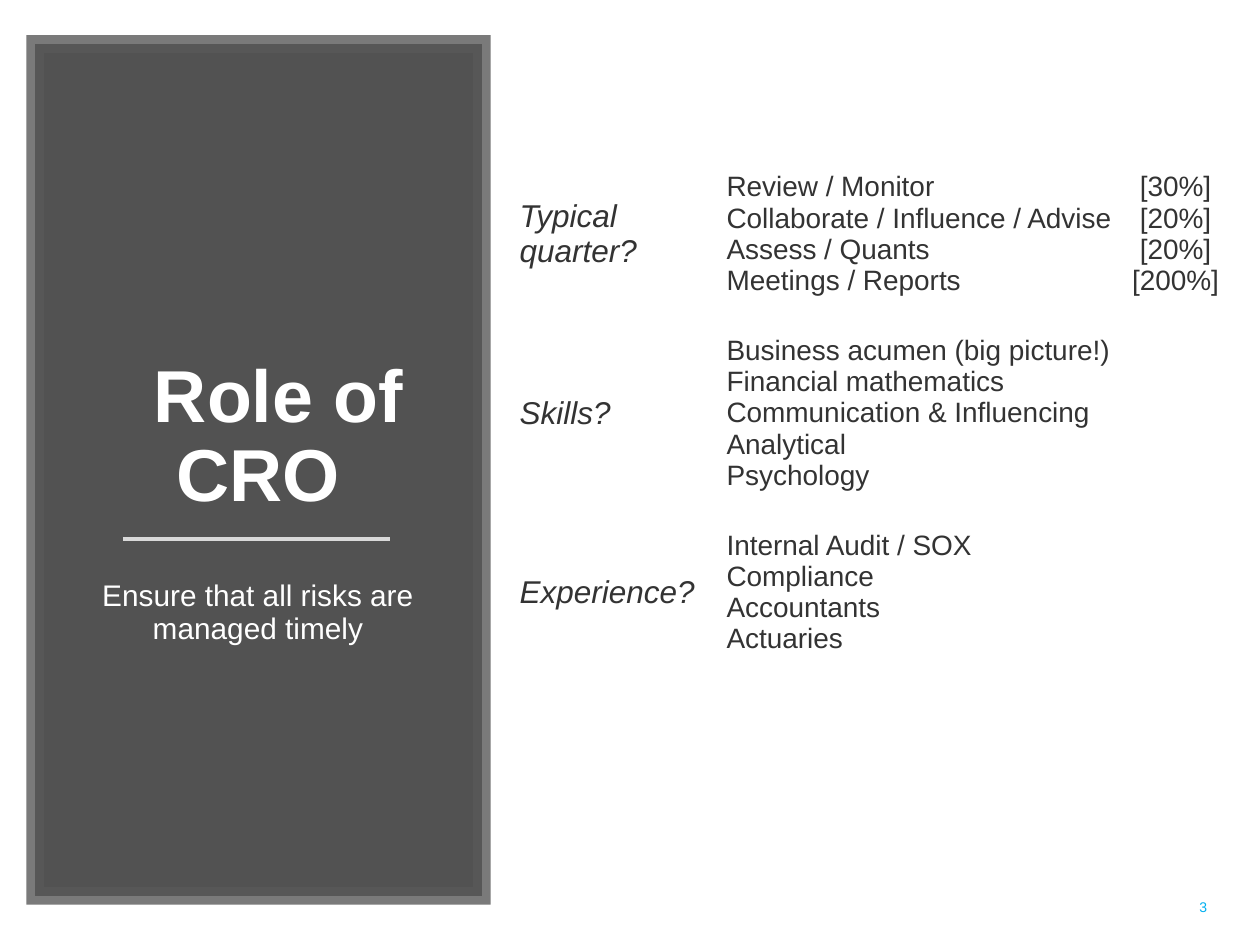
from lxml.etree import SubElement
from pptx import Presentation
from pptx.dml.color import RGBColor
from pptx.enum.shapes import MSO_CONNECTOR as CONN, MSO_SHAPE as SHAPE
from pptx.enum.text import MSO_ANCHOR as ANCHOR, PP_ALIGN as ALIGN
from pptx.oxml.ns import qn
from pptx.util import Pt

PX = 914400 / 126
FONT = "Arial"
COLORS = {
    "panel": "404040", "frame": "595959", "rule": "D9D9D9",
    "light": "FFFFFF", "ink": "333333", "number": "00B0F0",
}
ROLE = [
    ("Typical quarter?", [
        "Review / Monitor\t[30%]",
        "Collaborate / Influence / Advise\t[20%]",
        "Assess / Quants\t[20%]",
        "Meetings / Reports\t[200%]",
    ]),
    ("Skills?", [
        "Business acumen (big picture!)", "Financial mathematics",
        "Communication & Influencing", "Analytical", "Psychology",
    ]),
    ("Experience?", [
        "Internal Audit / SOX", "Compliance", "Accountants", "Actuaries",
    ]),
]


def emu(px):
    return round(px * PX)


def color(name):
    return RGBColor.from_string(COLORS[name])


def set_alpha(fill, percent):
    clr = fill._xPr.find(".//" + qn("a:srgbClr"))
    SubElement(clr, qn("a:alpha"), val=str(percent * 1000))


def add_run(p, text, size, name, bold=False, italic=False):
    r = p.add_run()
    r.text = text
    r.font.name, r.font.size = FONT, Pt(size)
    r.font.bold, r.font.italic = bold, italic
    r.font.color.rgb = color(name)


def add_text(s, x, y, w, h, text, size, name, bold=False,
             align=ALIGN.LEFT, anchor=ANCHOR.TOP, spacing=1):
    tf = s.shapes.add_textbox(emu(x), emu(y), emu(w), emu(h)).text_frame
    tf.word_wrap = True
    tf.vertical_anchor = anchor
    p = tf.paragraphs[0]
    p.alignment, p.line_spacing = align, spacing
    add_run(p, text, size, name, bold)
    return p


def add_panel(s, x, y, w, h):
    sp = s.shapes.add_shape(SHAPE.RECTANGLE, emu(x), emu(y), emu(w), emu(h))
    sp.shadow.inherit = False
    sp.fill.solid()
    sp.fill.fore_color.rgb = color("panel")
    set_alpha(sp.fill, 90)
    sp.line.color.rgb = color("frame")
    sp.line.width = Pt(10)
    set_alpha(sp.line.fill, 80)
    SubElement(sp.line._ln, qn("a:miter"), lim="800000")

    left, width = x + 34, w - 69
    p = add_text(s, left, y + 82, width, 398, "Role of CRO", 42, "light",
                 True, ALIGN.CENTER, ANCHOR.BOTTOM, 0.9)
    p._p.get_or_add_pPr().set("indent", str(emu(41)))
    p = add_text(s, left, y + 531, width, 210,
                 "Ensure that all risks are managed timely", 17, "light",
                 align=ALIGN.CENTER, spacing=0.9)
    p.space_before = Pt(10)

    rule = s.shapes.add_connector(CONN.STRAIGHT, emu(x + 88), emu(y + 495),
                                  emu(x + 355), emu(y + 495))
    rule.line.color.rgb = color("rule")
    rule.line.width = Pt(1.75)
    SubElement(rule._element.spPr, qn("a:effectLst"))


def fill_cell(cell, lines, size, italic=False):
    cell.fill.background()
    cell.vertical_anchor = ANCHOR.MIDDLE
    tf = cell.text_frame
    for i, line in enumerate(lines):
        p = tf.add_paragraph() if i else tf.paragraphs[0]
        add_run(p, line, size, "ink", italic=italic)
        if "\t" in line:
            tabs = SubElement(p._p.get_or_add_pPr(), qn("a:tabLst"))
            SubElement(tabs, qn("a:tab"), pos=str(emu(449)), algn="ctr")


def add_role_table(s, x, y, w, h):
    tbl = s.shapes.add_table(len(ROLE), 2, emu(x), emu(y),
                             emu(w), emu(h)).table
    tbl.first_row = tbl.horz_banding = False
    style = tbl._tbl.tblPr.find(qn("a:tableStyleId"))
    style.text = "{2D5ABB26-0587-4C30-8999-92F81FD0307C}"
    label_w = 207
    tbl.columns[0].width = emu(label_w)
    tbl.columns[1].width = emu(w - label_w)
    for row, (question, answers) in zip(tbl.rows, ROLE):
        row.height = emu(h / len(ROLE))
        fill_cell(row.cells[0], [question], 18, True)
        fill_cell(row.cells[1], answers, 16)


def add_slide_number(s, x, y, w, h):
    p = add_text(s, x, y, w, h, "3", 8, "number")
    p.space_after = Pt(6)


def main():
    prs = Presentation()
    prs.slide_width, prs.slide_height = emu(1260), emu(945)
    s = prs.slides.add_slide(prs.slide_layouts[6])
    add_panel(s, 35, 44, 447, 852)
    add_slide_number(s, 1187, 892, 42, 30)
    add_role_table(s, 507, 145, 728, 534)
    prs.save("out.pptx")


if __name__ == "__main__":
    main()
